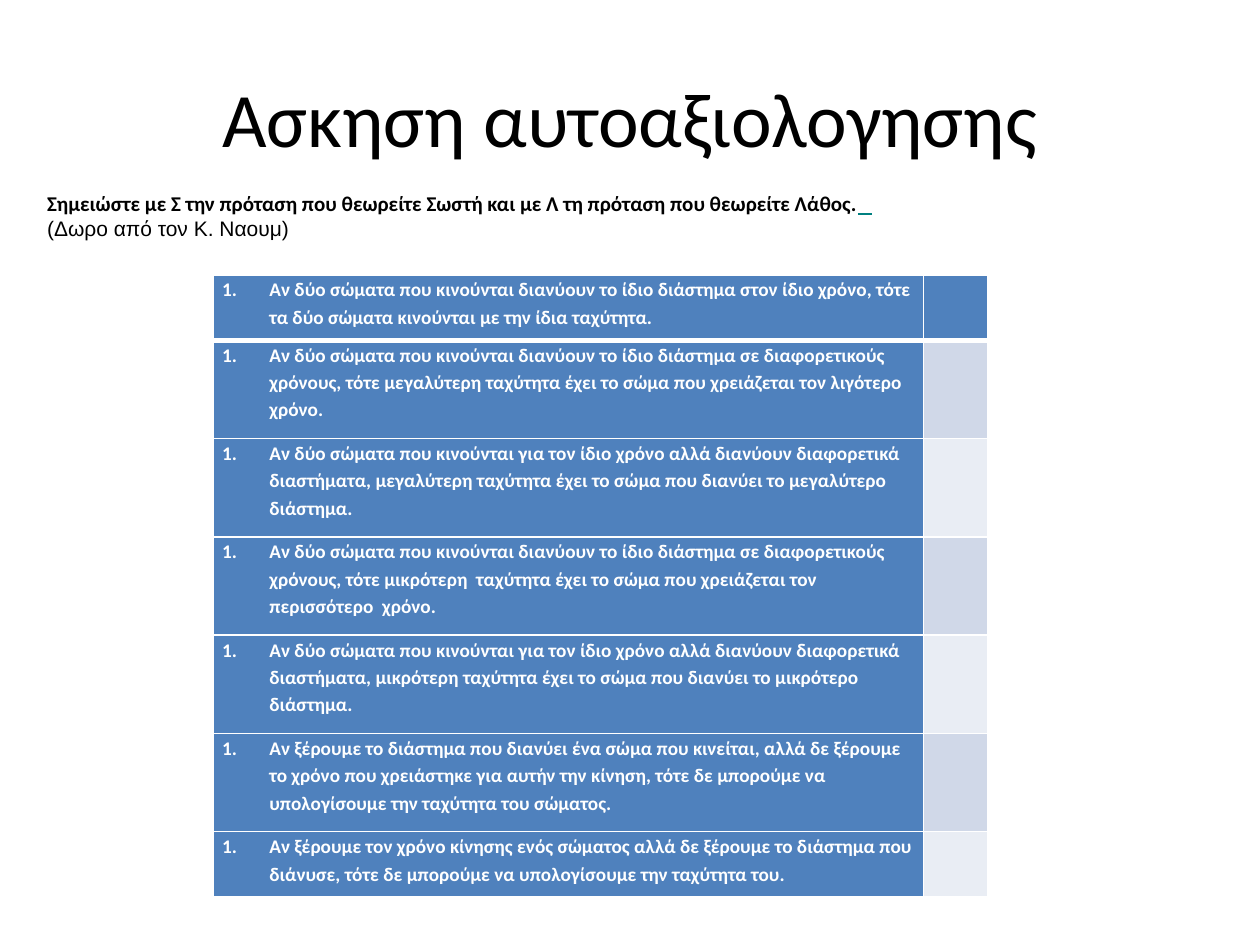
from dataclasses import dataclass

from lxml import etree
from pptx import Presentation
from pptx import util as u
from pptx.dml.color import RGBColor
from pptx.enum import text
from pptx.oxml.ns import qn


@dataclass(frozen=True)
class Theme:
    heading_font: str = "Calibri"
    note_font: str = "Arial"
    title_size: int = 44
    intro_size: int = 12
    cell_size: int = 11
    ink: str = "000000"
    accent: str = "008080"
    white: str = "FFFFFF"
    blue: str = "4F81BD"
    bands: tuple = ("E9EDF4", "D0D8E8")


THEME = Theme()

STATEMENTS = [
    "Αν δύο σώματα που κινούνται διανύουν το ίδιο διάστημα στον ίδιο χρόνο, τότε τα δύο σώματα κινούνται με την ίδια ταχύτητα.",
    "Αν δύο σώματα που κινούνται διανύουν το ίδιο διάστημα σε διαφορετικούς χρόνους, τότε μεγαλύτερη ταχύτητα έχει το σώμα που χρειάζεται τον λιγότερο χρόνο.",
    "Αν δύο σώματα που κινούνται για τον ίδιο χρόνο αλλά διανύουν διαφορετικά διαστήματα, μεγαλύτερη ταχύτητα έχει το σώμα που διανύει το μεγαλύτερο διάστημα.",
    "Αν δύο σώματα που κινούνται διανύουν το ίδιο διάστημα σε διαφορετικούς χρόνους, τότε μικρότερη  ταχύτητα έχει το σώμα που χρειάζεται τον περισσότερο  χρόνο.",
    "Αν δύο σώματα που κινούνται για τον ίδιο χρόνο αλλά διανύουν διαφορετικά διαστήματα, μικρότερη ταχύτητα έχει το σώμα που διανύει το μικρότερο  διάστημα.",
    "Αν ξέρουμε το διάστημα που διανύει ένα σώμα που κινείται, αλλά δε ξέρουμε το χρόνο που χρειάστηκε για αυτήν την κίνηση, τότε δε μπορούμε να υπολογίσουμε την ταχύτητα του σώματος.",
    "Αν ξέρουμε τον χρόνο κίνησης ενός σώματος αλλά δε ξέρουμε το διάστημα που διάνυσε, τότε δε μπορούμε να υπολογίσουμε την ταχύτητα του.",
]


def set_attrs(obj, values):
    for name, value in values.items():
        setattr(obj, name, value)


def add_run(p, content, color, size, **font):
    r = p.add_run()
    r.text = content
    set_attrs(r.font, {"size": u.Pt(size), **font})
    r.font.color.rgb = RGBColor.from_string(color)


def number_paragraph(p, indent):
    pPr = p._p.get_or_add_pPr()
    pPr.set("marL", str(indent))
    pPr.set("indent", str(-indent))
    etree.SubElement(pPr, qn("a:buFont"), typeface="+mj-lt")
    etree.SubElement(pPr, qn("a:buAutoNum"), type="arabicPeriod")


def style_cell(cell, fill, top, bottom):
    # Borders come before the fill in the cell properties
    tcPr = cell._tc.get_or_add_tcPr()
    for side, width in {"L": 1, "R": 1, "T": top, "B": bottom}.items():
        ln = etree.SubElement(tcPr, qn(f"a:ln{side}"), w=str(u.Pt(width)))
        solid = etree.SubElement(ln, qn("a:solidFill"))
        etree.SubElement(solid, qn("a:srgbClr"), val=THEME.white)
    cell.fill.solid()
    cell.fill.fore_color.rgb = RGBColor.from_string(fill)


def place_title(s, left, top, width, height):
    sp = s.shapes.title
    set_attrs(sp, {"left": left, "top": top, "width": width, "height": height})
    tf = sp.text_frame
    tf.vertical_anchor = text.MSO_ANCHOR.MIDDLE
    p = tf.paragraphs[0]
    p.alignment = text.PP_ALIGN.CENTER
    add_run(p, "Ασκηση αυτοαξιολογησης", THEME.ink, THEME.title_size,
            name=THEME.heading_font)


def place_intro(s, left, top, width, height):
    tf = s.shapes.add_textbox(left, top, width, height).text_frame
    set_attrs(tf, {"word_wrap": False,
                   "auto_size": text.MSO_AUTO_SIZE.SHAPE_TO_FIT_TEXT,
                   "vertical_anchor": text.MSO_ANCHOR.MIDDLE})
    p = tf.paragraphs[0]
    bold = {"name": THEME.heading_font, "bold": True}
    add_run(p, "Σημειώστε με Σ την πρόταση που θεωρείτε Σωστή και με Λ τη "
               "πρόταση που θεωρείτε Λάθος.", THEME.ink, THEME.intro_size, **bold)
    # Underlined answer blank
    add_run(p, "   ", THEME.accent, THEME.intro_size, underline=True, **bold)
    add_run(tf.add_paragraph(), "(Δωρο από τον Κ. Ναουμ)", THEME.ink,
            THEME.intro_size, name=THEME.note_font)


def place_statements(s, left, top, width, height):
    count = len(STATEMENTS)
    table = s.shapes.add_table(count, 2, left, top, width, height).table
    answer_width = u.Cm(1.3)
    table.columns[0].width = width - answer_width
    table.columns[1].width = answer_width

    # First and last rows hold two lines, the others three
    lines = [2] + [3] * (count - 2) + [2]
    for i, statement in enumerate(STATEMENTS):
        table.rows[i].height = int(height * lines[i] / sum(lines))
        statement_cell, answer_cell = table.cell(i, 0), table.cell(i, 1)
        rule = {"top": 3 if i == 1 else 1, "bottom": 3 if i == 0 else 1}
        style_cell(statement_cell, THEME.blue, **rule)
        style_cell(answer_cell, THEME.bands[i % 2] if i else THEME.blue, **rule)

        set_attrs(statement_cell, {"margin_left": u.Cm(0.18), "margin_right": u.Cm(0.18),
                                   "margin_top": 0, "margin_bottom": 0})
        p = statement_cell.text_frame.paragraphs[0]
        number_paragraph(p, u.Cm(0.95))
        p.line_spacing = 1.15
        add_run(p, statement, THEME.white, THEME.cell_size,
                name=THEME.heading_font, bold=True)


def main():
    prs = Presentation()
    set_attrs(prs, {"slide_width": u.Cm(25.4), "slide_height": u.Cm(19.05)})
    s = prs.slides.add_slide(prs.slide_layouts[5])
    place_title(s, u.Cm(1.27), u.Cm(0.76), u.Cm(22.86), u.Cm(3.18))
    place_statements(s, u.Cm(4.3), u.Cm(5.54), u.Cm(15.62), u.Cm(12.55))
    place_intro(s, u.Cm(0.7), u.Cm(3.71), u.Cm(17.35), u.Cm(1.27))
    prs.save("out.pptx")


if __name__ == "__main__":
    main()
